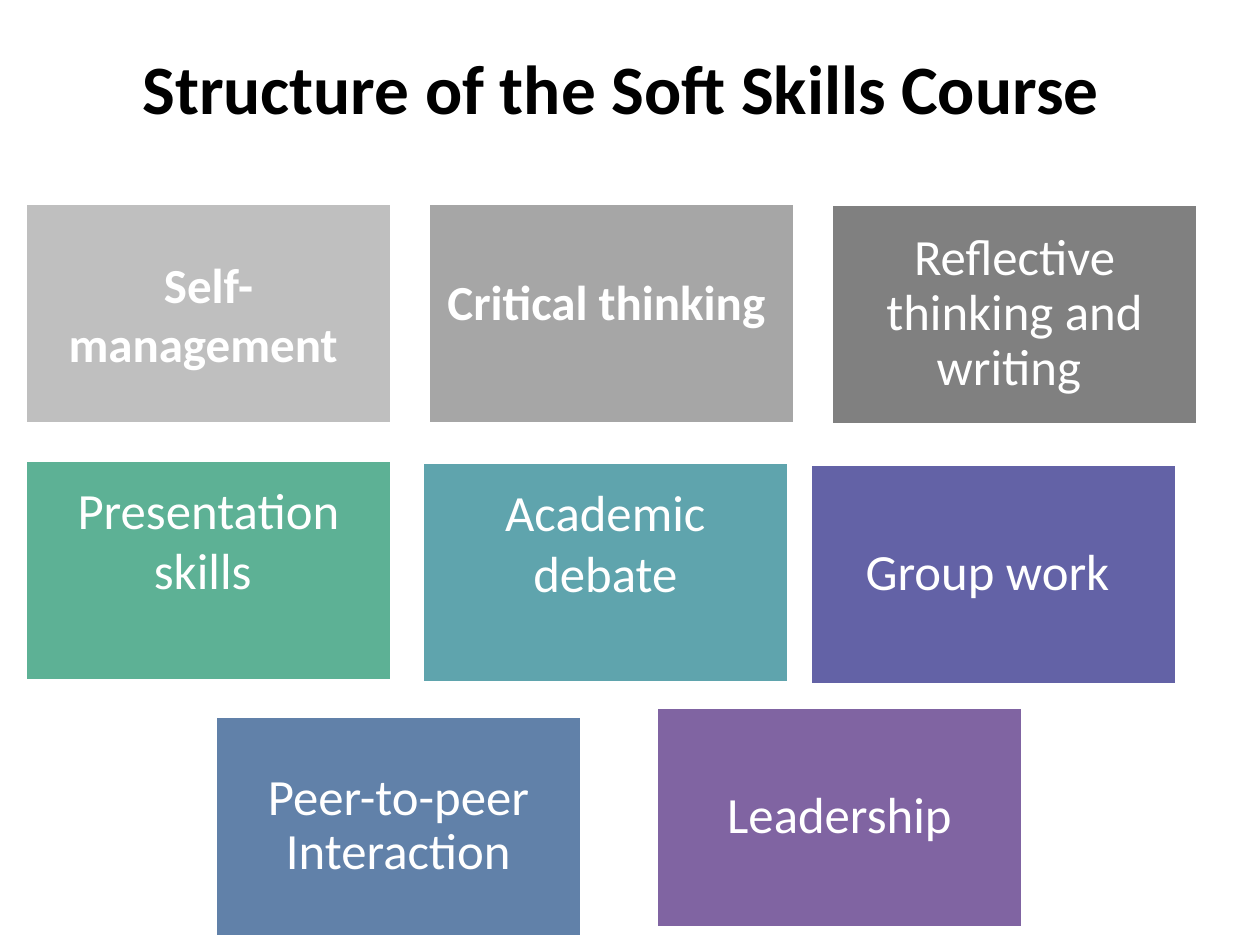
from dataclasses import dataclass

from pptx import Presentation
from pptx.dml.color import RGBColor
from pptx.enum.shapes import MSO_SHAPE
from pptx.enum.text import MSO_ANCHOR, PP_ALIGN
from pptx.util import Cm, Pt


@dataclass(frozen=True)
class Theme:
    font: str = "Calibri"
    title_color: str = "000000"
    card_text: str = "FFFFFF"
    card_line: str = "FFFFFF"
    title_size: float = 39.6
    bold_size: float = 28
    card_size: float = 29


class Deck:
    CARD_W, CARD_H, CARD_INSET = 7.39, 4.45, 0.3

    def __init__(self, theme):
        self.theme = theme
        self.prs = Presentation()
        self.prs.slide_width, self.prs.slide_height = Cm(25.4), Cm(19.05)
        self.s = self.prs.slides.add_slide(self.prs.slide_layouts[6])

    def add_text(self, sp, text, size, color, bold=False, spacing=1.0):
        tf = sp.text_frame
        tf.word_wrap = True
        tf.vertical_anchor = MSO_ANCHOR.MIDDLE
        p = tf.paragraphs[0]
        p.alignment = PP_ALIGN.CENTER
        p.line_spacing = spacing
        r = p.add_run()
        r.text = text
        r.font.name = self.theme.font
        r.font.size = Pt(size)
        r.font.bold = bold
        r.font.color.rgb = RGBColor.from_string(color)

    def title(self, text, left, top, width, height):
        sp = self.s.shapes.add_textbox(Cm(left), Cm(top), Cm(width), Cm(height))
        self.add_text(sp, text, self.theme.title_size, self.theme.title_color, bold=True)

    def card(self, text, left, top, fill, bold=False, spacing=1.0, lift=0):
        """Draw a topic card; lift is extra bottom inset that raises its text."""
        t = self.theme
        sp = self.s.shapes.add_shape(MSO_SHAPE.RECTANGLE, Cm(left), Cm(top),
                                     Cm(self.CARD_W), Cm(self.CARD_H))
        sp.shadow.inherit = False
        sp.fill.solid()
        sp.fill.fore_color.rgb = RGBColor.from_string(fill)
        sp.line.color.rgb = RGBColor.from_string(t.card_line)
        sp.line.width = Pt(2)
        tf = sp.text_frame
        tf.margin_left = tf.margin_right = tf.margin_top = Cm(self.CARD_INSET)
        tf.margin_bottom = Cm(self.CARD_INSET + lift)
        size = t.bold_size if bold else t.card_size
        self.add_text(sp, text, size, t.card_text, bold, spacing)


def main():
    deck = Deck(Theme())
    strong = {"bold": True}
    tight = {"spacing": 0.9}
    raised = {"lift": 1.25}
    cards = [
        ("Self-management ", 0.51, 4.09, "BFBFBF", strong),
        ("Critical thinking ", 8.64, 4.09, "A6A6A6", strong | {"lift": 0.5}),
        ("Reflective thinking and writing ", 16.76, 4.11, "808080", tight),
        ("Presentation skills ", 0.51, 9.27, "5DB195", raised),
        ("Academic debate", 8.51, 9.32, "5FA4AD", raised),
        ("Peer-to-peer Interaction", 4.34, 14.43, "6181A9", tight),
        ("Group work ", 16.33, 9.35, "6362A6", tight),
        ("Leadership", 13.23, 14.25, "8064A2", tight),
    ]
    for text, left, top, fill, style in cards:
        deck.card(text, left, top, fill, **style)
    deck.title("Structure of the Soft Skills Course", 1.09, 0.75, 22.86, 2)
    deck.prs.save("out.pptx")


if __name__ == "__main__":
    main()
